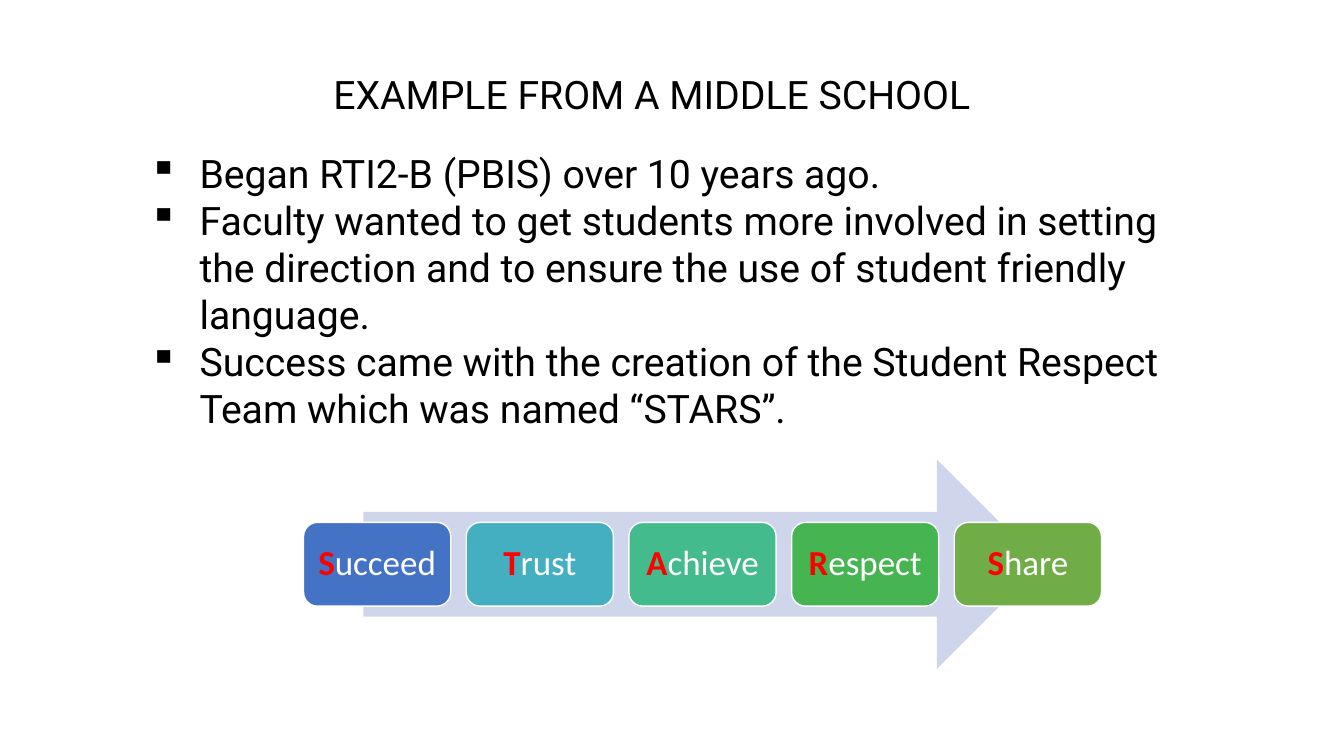
from dataclasses import dataclass

from lxml.etree import SubElement
from pptx import Presentation
from pptx.dml.color import RGBColor
from pptx.enum.shapes import MSO_SHAPE
from pptx.enum.text import MSO_ANCHOR, MSO_AUTO_SIZE, PP_ALIGN
from pptx.oxml.ns import qn
from pptx.util import Cm, Pt


@dataclass(frozen=True)
class Theme:
    text_font: str = "Roboto"
    card_font: str = "Calibri"
    text_size: Pt = Pt(28)
    card_size: Pt = Pt(25)
    ink: RGBColor = RGBColor.from_string("000000")
    white: RGBColor = RGBColor.from_string("FFFFFF")
    initial: RGBColor = RGBColor.from_string("FF0000")
    arrow: RGBColor = RGBColor.from_string("CFD5EA")


@dataclass(frozen=True)
class Box:
    left: int
    top: int
    width: int
    height: int


THEME = Theme()
TITLE = "EXAMPLE FROM A MIDDLE SCHOOL"
POINTS = [
    "Began RTI2-B (PBIS) over 10 years ago.",
    "Faculty wanted to get students more involved in setting the direction "
    "and to ensure the use of student friendly language.",
    "Success came with the creation of the Student Respect Team which was named “STARS”.",
]
VALUES = [
    ("Succeed", "4472C4"),
    ("Trust", "43AFC0"),
    ("Achieve", "43BB8D"),
    ("Respect", "45B451"),
    ("Share", "70AD47"),
]


def style_font(font, name, size, color):
    font.name = name
    font.size = size
    font.color.rgb = color


def add_bullet(paragraph, indent):
    properties = paragraph._p.get_or_add_pPr()
    properties.set("marL", str(indent))
    properties.set("indent", str(-indent))
    SubElement(properties, qn("a:buChar"), char="▪")


def add_text(page, box, lines, wrap):
    shape = page.shapes.add_textbox(box.left, box.top, box.width, box.height)
    frame = shape.text_frame
    frame.word_wrap = wrap
    frame.auto_size = MSO_AUTO_SIZE.SHAPE_TO_FIT_TEXT
    frame.text = "\n".join(lines)
    for paragraph in frame.paragraphs:
        style_font(paragraph.font, THEME.text_font, THEME.text_size, THEME.ink)
    return frame


def add_title(page, box):
    add_text(page, box, [TITLE], wrap=False)


def add_points(page, box):
    frame = add_text(page, box, POINTS, wrap=True)
    for paragraph in frame.paragraphs:
        add_bullet(paragraph, Cm(1.27))


def add_filled_shape(page, kind, box, color):
    shape = page.shapes.add_shape(kind, box.left, box.top, box.width, box.height)
    shape.shadow.inherit = False
    shape.fill.solid()
    shape.fill.fore_color.rgb = color
    return shape


def add_card(page, box, word, color):
    card = add_filled_shape(page, MSO_SHAPE.ROUNDED_RECTANGLE, box, color)
    card.line.color.rgb = THEME.white
    card.line.width = Pt(1)
    frame = card.text_frame
    frame.word_wrap = True
    frame.vertical_anchor = MSO_ANCHOR.MIDDLE
    frame.margin_left = frame.margin_right = Cm(0.2)
    paragraph = frame.paragraphs[0]
    paragraph.alignment = PP_ALIGN.CENTER
    paragraph.line_spacing = 0.9
    style_font(paragraph.font, THEME.card_font, THEME.card_size, THEME.white)
    initial = paragraph.add_run()
    initial.text = word[0]
    initial.font.bold = True
    initial.font.color.rgb = THEME.initial
    rest = paragraph.add_run()
    rest.text = word[1:]


def add_value_process(page, box):
    arrow_width = int(box.width * 0.85)
    arrow_left = box.left + (box.width - arrow_width) // 2
    arrow_box = Box(arrow_left, box.top, arrow_width, box.height)
    arrow = add_filled_shape(page, MSO_SHAPE.RIGHT_ARROW, arrow_box, THEME.arrow)
    arrow.line.fill.background()

    card_width = Cm(3.71)
    card_height = int(box.height * 0.4)
    card_top = box.top + (box.height - card_height) // 2
    pitch = (box.width - card_width) // (len(VALUES) - 1)
    for index, (word, color) in enumerate(VALUES):
        card_box = Box(box.left + index * pitch, card_top, card_width, card_height)
        add_card(page, card_box, word, RGBColor.from_string(color))


def main():
    deck = Presentation()
    deck.slide_width = Cm(33.87)
    deck.slide_height = Cm(19.05)
    page = deck.slides.add_slide(deck.slide_layouts[6])
    add_title(page, Box(Cm(8.15), Cm(1.65), Cm(17.09), Cm(1.45)))
    add_points(page, Box(Cm(3.51), Cm(3.63), Cm(27.05), Cm(7.44)))
    add_value_process(page, Box(Cm(7.65), Cm(11.58), Cm(20.11), Cm(5.28)))
    deck.save("out.pptx")


if __name__ == "__main__":
    main()
